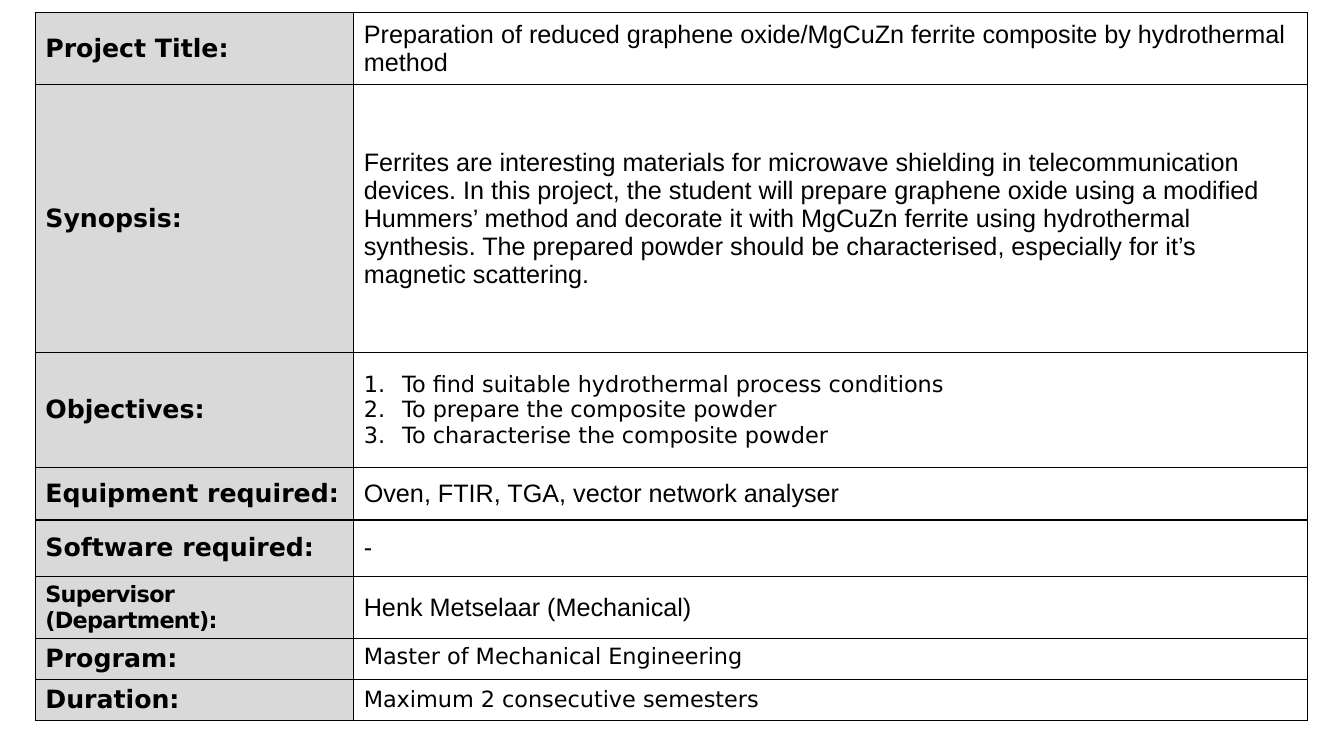
from dataclasses import dataclass

from lxml import etree
from pptx import Presentation
from pptx.dml.color import RGBColor
from pptx.enum import text
from pptx.oxml import ns
from pptx.table import _Cell as Cell
from pptx.util import Pt

COLORS = {"ink": "000000", "label": "D9D9D9"}
SANS, ARIAL = "DejaVu Sans", "Arial"
LEFT, TOP = 25.2, 8.7
WIDTHS = (227.5, 681.1)
BORDER = 0.96
INDENT = 27.4


@dataclass
class Run:
    text: str
    size: float = 18
    font: str = SANS
    bold: bool = False
    spacing: float = 0


@dataclass
class Row:
    height: float
    label: list[Run]
    lines: list[Run]
    numbered: bool = False
    middle: bool = True


def label(words: str) -> list[Run]:
    return [Run(words, bold=True)]


def body(words: str) -> list[Run]:
    return [Run(words, font=ARIAL)]


def plain(*lines: str) -> list[Run]:
    return [Run(line, size=16) for line in lines]


def tight(words: str, size: float) -> Run:
    return Run(words, size=size, bold=True, spacing=-0.5)


ROWS = [
    Row(51.8, label("Project Title:"),
        body("Preparation of reduced graphene oxide/MgCuZn ferrite composite "
             "by hydrothermal method")),
    Row(191.5, label("Synopsis:"),
        body("Ferrites are interesting materials for microwave shielding in "
             "telecommunication devices. In this project, the student will "
             "prepare graphene oxide using a modified Hummers’ method and "
             "decorate it with MgCuZn ferrite using hydrothermal synthesis. "
             "The prepared powder should be characterised, especially for "
             "it’s magnetic scattering.")),
    Row(82.1, label("Objectives:"),
        plain("To find suitable hydrothermal process conditions",
              "To prepare the composite powder",
              "To characterise the composite powder"), numbered=True),
    Row(37.4, label("Equipment required:"),
        body("Oven, FTIR, TGA, vector network analyser")),
    Row(40.3, label("Software required:"), body("-")),
    Row(29.5, [tight("Supervisor", 16), tight(" ", 5), tight("(Department):", 16)],
        body("Henk Metselaar (Mechanical)")),
    Row(29.5, label("Program:"), plain("Master of Mechanical Engineering"),
        middle=False),
    Row(29.5, label("Duration:"), plain("Maximum 2 consecutive semesters")),
]


def write(para, words: str, *, size: float, font: str, bold: bool,
          spacing: float) -> None:
    run = para.add_run()
    run.text = words
    run.font.size = Pt(size)
    run.font.name = font
    run.font.bold = bold
    run.font.color.rgb = RGBColor.from_string(COLORS["ink"])
    if spacing:
        run.font._element.set("spc", str(round(spacing * 100)))


def number(para) -> None:
    """Give the paragraph a hanging number."""
    props = para._p.get_or_add_pPr()
    props.set("marL", str(Pt(INDENT)))
    props.set("indent", str(-Pt(INDENT)))
    etree.SubElement(props, ns.qn("a:buAutoNum"), type="arabicPeriod")


def frame(cell: Cell) -> None:
    """Draw a thin line on all four sides."""
    props = cell._tc.get_or_add_tcPr()
    for side in ("a:lnL", "a:lnR", "a:lnT", "a:lnB"):
        line = etree.SubElement(props, ns.qn(side), w=str(Pt(BORDER)))
        fill = etree.SubElement(line, ns.qn("a:solidFill"))
        etree.SubElement(fill, ns.qn("a:srgbClr"), val=COLORS["ink"])


def fill_cell(cell: Cell, paras: list[list[Run]], *, shade: str = "",
              numbered: bool = False, middle: bool = True) -> None:
    frame(cell)
    if shade:
        cell.fill.solid()
        cell.fill.fore_color.rgb = RGBColor.from_string(shade)
    else:
        cell.fill.background()
    anchor = text.MSO_ANCHOR
    cell.vertical_anchor = anchor.MIDDLE if middle else anchor.TOP
    for i, runs in enumerate(paras):
        para = cell.text_frame.add_paragraph() if i else cell.text_frame.paragraphs[0]
        if numbered:
            number(para)
        for run in runs:
            write(para, run.text, size=run.size, font=run.font,
                  bold=run.bold, spacing=run.spacing)


def main() -> None:
    deck = Presentation()
    deck.slide_width, deck.slide_height = Pt(960), Pt(540)
    slide = deck.slides.add_slide(deck.slide_layouts[6])
    table = slide.shapes.add_table(
        len(ROWS), len(WIDTHS), Pt(LEFT), Pt(TOP), Pt(sum(WIDTHS)),
        Pt(sum(row.height for row in ROWS))).table
    table.first_row = table.horz_banding = False
    for col, width in zip(table.columns, WIDTHS):
        col.width = Pt(width)
    for i, row in enumerate(ROWS):
        table.rows[i].height = Pt(row.height)
        fill_cell(table.cell(i, 0), [row.label], shade=COLORS["label"])
        fill_cell(table.cell(i, 1), [[line] for line in row.lines],
                  numbered=row.numbered, middle=row.middle)
    deck.save("out.pptx")


if __name__ == "__main__":
    main()
